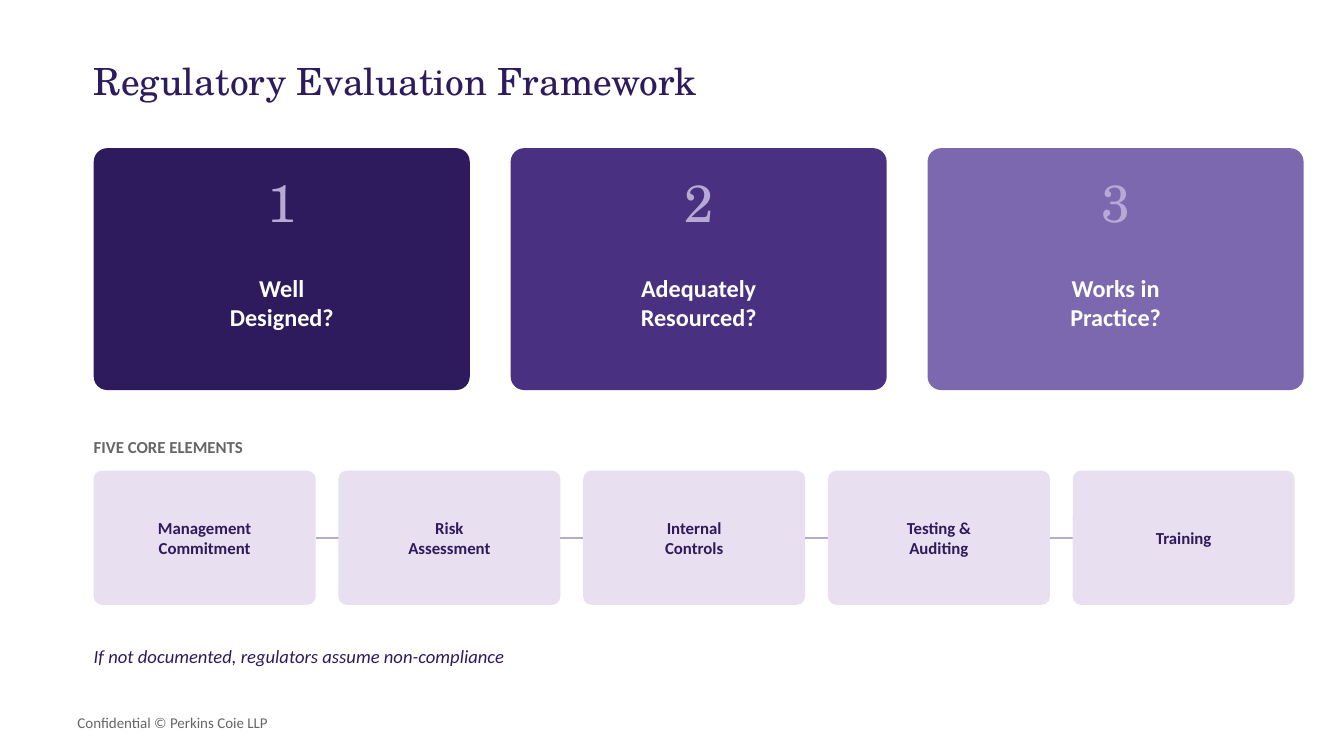
from lxml import etree
from pptx import Presentation
from pptx.dml.color import RGBColor
from pptx.enum.shapes import MSO_CONNECTOR, MSO_SHAPE
from pptx.enum.text import MSO_ANCHOR, PP_ALIGN
from pptx.oxml.ns import qn
from pptx.util import Inches, Pt

ROUNDED = MSO_SHAPE.ROUNDED_RECTANGLE
STRAIGHT = MSO_CONNECTOR.STRAIGHT
MIDDLE = MSO_ANCHOR.MIDDLE
LEFT, CENTER = PP_ALIGN.LEFT, PP_ALIGN.CENTER

SERIF, SANS = "TeX Gyre Schola", "Calibri"
COLORS = {
    "ink": "2D1B5E",
    "violet": "4A3080",
    "lavender": "7B68AE",
    "accent": "B8A9D4",
    "pale": "E8E0F0",
    "gray": "666666",
    "white": "FFFFFF",
}
MARGIN = 0.93

deck = Presentation()
deck.slide_width, deck.slide_height = Inches(13.33), Inches(7.5)
page = deck.slides.add_slide(deck.slide_layouts[6])


def add_text(area, lines, size, color, font=SANS, align=LEFT, bold=False, italic=False, inset=0):
    box = page.shapes.add_textbox(*[Inches(length) for length in area])
    frame = box.text_frame
    frame.word_wrap = True
    frame.vertical_anchor = MIDDLE
    frame.margin_left = frame.margin_right = Inches(inset)
    frame.margin_top = frame.margin_bottom = Inches(inset / 2)
    frame.text = "\n".join(lines)
    for para in frame.paragraphs:
        para.alignment = align
        para.font.name = font
        para.font.size = Pt(size)
        para.font.bold = bold
        para.font.italic = italic
        para.font.color.rgb = RGBColor.from_string(COLORS[color])


def add_panel(area, color, rounding):
    panel = page.shapes.add_shape(ROUNDED, *[Inches(length) for length in area])
    panel.adjustments[0] = rounding
    panel.shadow.inherit = False
    panel.fill.solid()
    panel.fill.fore_color.rgb = RGBColor.from_string(COLORS[color])
    panel.line.fill.background()


# Title and footer
add_text((MARGIN, 0.33, 10, 0.93), ["Regulatory Evaluation Framework"], 26.7, "ink", font=SERIF)
add_text((0.67, 7, 12, 0.33), ["Confidential © Perkins Coie LLP"], 10.7, "gray", inset=0.1)

# Three numbered questions
questions = [
    ("ink", ["Well", "Designed?"]),
    ("violet", ["Adequately", "Resourced?"]),
    ("lavender", ["Works in", "Practice?"]),
]
card_width = 3.73
card_step = (9.2 - MARGIN) / (len(questions) - 1)
for index, (color, lines) in enumerate(questions):
    left = MARGIN + index * card_step
    add_panel((left, 1.47, card_width, 2.4), color, 0.056)
    add_text((left, 1.6, card_width, 0.8), [str(index + 1)], 37.3, "accent", font=SERIF, align=CENTER)
    add_text((left, 2.4, card_width, 1.2), lines, 17.3, "white", align=CENTER, bold=True)

# Five core elements, joined by short lines
add_text((MARGIN, 4.2, 12, 0.47), ["FIVE CORE ELEMENTS"], 12, "gray", bold=True)
elements = [
    ["Management", "Commitment"],
    ["Risk", "Assessment"],
    ["Internal", "Controls"],
    ["Testing &", "Auditing"],
    ["Training"],
]
element_top, element_width, element_height = 4.67, 2.2, 1.33
element_step = (10.64 - MARGIN) / (len(elements) - 1)
link_y = Inches(element_top + element_height / 2)
for index, lines in enumerate(elements):
    left = MARGIN + index * element_step
    area = (left, element_top, element_width, element_height)
    if index:
        link_start = left - element_step + element_width
        link = page.shapes.add_connector(STRAIGHT, Inches(link_start), link_y, Inches(left), link_y)
        link.line.color.rgb = RGBColor.from_string(COLORS["accent"])
        link.line.width = Pt(1.5)
        etree.SubElement(link._element.spPr, qn("a:effectLst"))
    add_panel(area, "pale", 0.06)
    add_text(area, lines, 12, "ink", align=CENTER, bold=True)

# Closing remark
add_text((MARGIN, 6.27, 12, 0.47), ["If not documented, regulators assume non-compliance"],
         13.3, "ink", italic=True)

deck.save("out.pptx")
